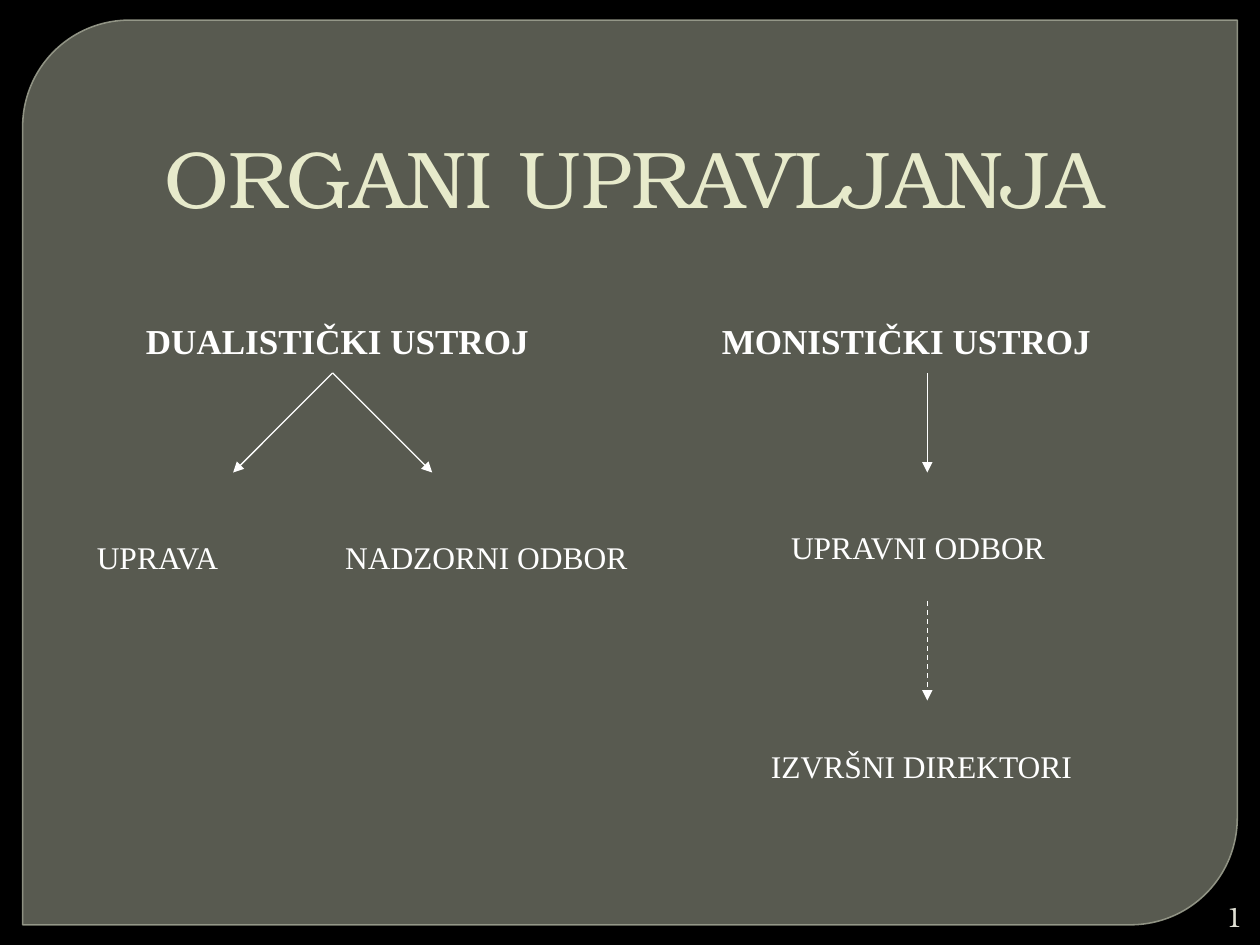
"""Build a slide comparing dualistic and monistic company management."""
from lxml import etree
from pptx import Presentation
from pptx.dml.color import RGBColor
from pptx.enum import dml, shapes, text
from pptx.oxml.ns import qn
from pptx.util import Inches, Pt

BLACK = RGBColor(0x00, 0x00, 0x00)
WHITE = RGBColor(0xFF, 0xFF, 0xFF)
PANEL_FILL = RGBColor(0x88, 0x8B, 0x7B)
PANEL_LINE = RGBColor(0x9D, 0xA0, 0x90)
TITLE_COLOR = RGBColor(0xE7, 0xEA, 0xCB)
NUMBER_COLOR = RGBColor(0xE0, 0xE0, 0xD4)
DISPLAY_FONT = "TeX Gyre Bonum"
BODY_FONT = "Times New Roman"


def write(shape, words, size, font_name, color, bold=False):
    shape.text_frame.text = words
    shape.text_frame.word_wrap = True
    paragraph = shape.text_frame.paragraphs[0]
    font = paragraph.runs[0].font
    font.size, font.name, font.bold = Pt(size), font_name, bold
    font.color.rgb = color
    return paragraph


presentation = Presentation()
presentation.slide_width = Inches(10)
presentation.slide_height = Inches(7.5)
slide = presentation.slides.add_slide(presentation.slide_layouts[5])
slide.background.fill.solid()
slide.background.fill.fore_color.rgb = BLACK

title = slide.shapes.title
title.left, title.top = Inches(0.5), Inches(0.58)
title.width, title.height = Inches(9), Inches(1.25)
title.text_frame.vertical_anchor = text.MSO_ANCHOR.BOTTOM
title.text_frame.margin_left = Inches(0.16)
paragraph = write(title, "ORGANI UPRAVLJANJA", 46, DISPLAY_FONT, TITLE_COLOR)
paragraph.alignment = text.PP_ALIGN.CENTER

panel = slide.shapes.add_shape(
    shapes.MSO_SHAPE.ROUND_2_DIAG_RECTANGLE,
    Inches(0.18), Inches(0.16), Inches(9.64), Inches(7.18))
panel.adjustments[0] = 0.118
panel.adjustments[1] = 0
panel.shadow.inherit = False
panel.fill.solid()
panel.fill.fore_color.rgb = PANEL_FILL
panel.line.color.rgb = PANEL_LINE
panel.line.width = Pt(0.87)
panel_colors = panel.element.spPr.iter(qn("a:srgbClr"))
for color, opacity in zip(panel_colors, (65, 88)):
    etree.SubElement(color, qn("a:alpha")).set("val", str(opacity * 1000))
title.element.addprevious(panel.element)

number = slide.shapes.add_textbox(Inches(9.45), Inches(7.12), Inches(0.51), Inches(0.3))
number.text_frame.vertical_anchor = text.MSO_ANCHOR.MIDDLE
paragraph = write(number, "1", 16, DISPLAY_FONT, NUMBER_COLOR)
paragraph.alignment = text.PP_ALIGN.RIGHT
field = number.element.find(".//" + qn("a:r"))
field.tag = qn("a:fld")
field.set("id", "{B6F15528-21DE-4FAA-801E-634DDDAF4B2B}")
field.set("type", "slidenum")

labels = [
    ("DUALISTIČKI USTROJ", 1.06, 2.49, 3.31, 20),
    ("MONISTIČKI USTROJ", 5.63, 2.49, 3.31, 20),
    ("UPRAVA", 0.67, 4.22, 1.97, 18),
    ("NADZORNI ODBOR", 2.64, 4.22, 2.68, 18),
    ("UPRAVNI ODBOR", 6.18, 4.14, 2.44, 18),
    ("IZVRŠNI DIREKTORI", 6.02, 5.88, 2.84, 18),
]
for words, left, top, width, size in labels:
    label = slide.shapes.add_textbox(
        Inches(left), Inches(top), Inches(width), Inches(0.43 if size == 20 else 0.4))
    write(label, words, size, BODY_FONT, WHITE, bold=size == 20)

ARROW_DROP = 0.79
arrows = [
    (2.64, 2.96, -ARROW_DROP, dml.MSO_LINE.SOLID),
    (2.64, 2.96, ARROW_DROP, dml.MSO_LINE.SOLID),
    (7.36, 2.96, 0, dml.MSO_LINE.SOLID),
    (7.36, 4.77, 0, dml.MSO_LINE.DASH),
]
for left, top, shift, dash in arrows:
    arrow = slide.shapes.add_connector(
        shapes.MSO_CONNECTOR.STRAIGHT, Inches(left), Inches(top),
        Inches(left + shift), Inches(top + ARROW_DROP))
    arrow.line.color.rgb = WHITE
    arrow.line.width = Pt(0.75)
    arrow.line.dash_style = dash
    properties = arrow.element.spPr
    etree.SubElement(properties.find(qn("a:ln")), qn("a:tailEnd")).set("type", "triangle")
    etree.SubElement(properties, qn("a:effectLst"))

presentation.save("out.pptx")
